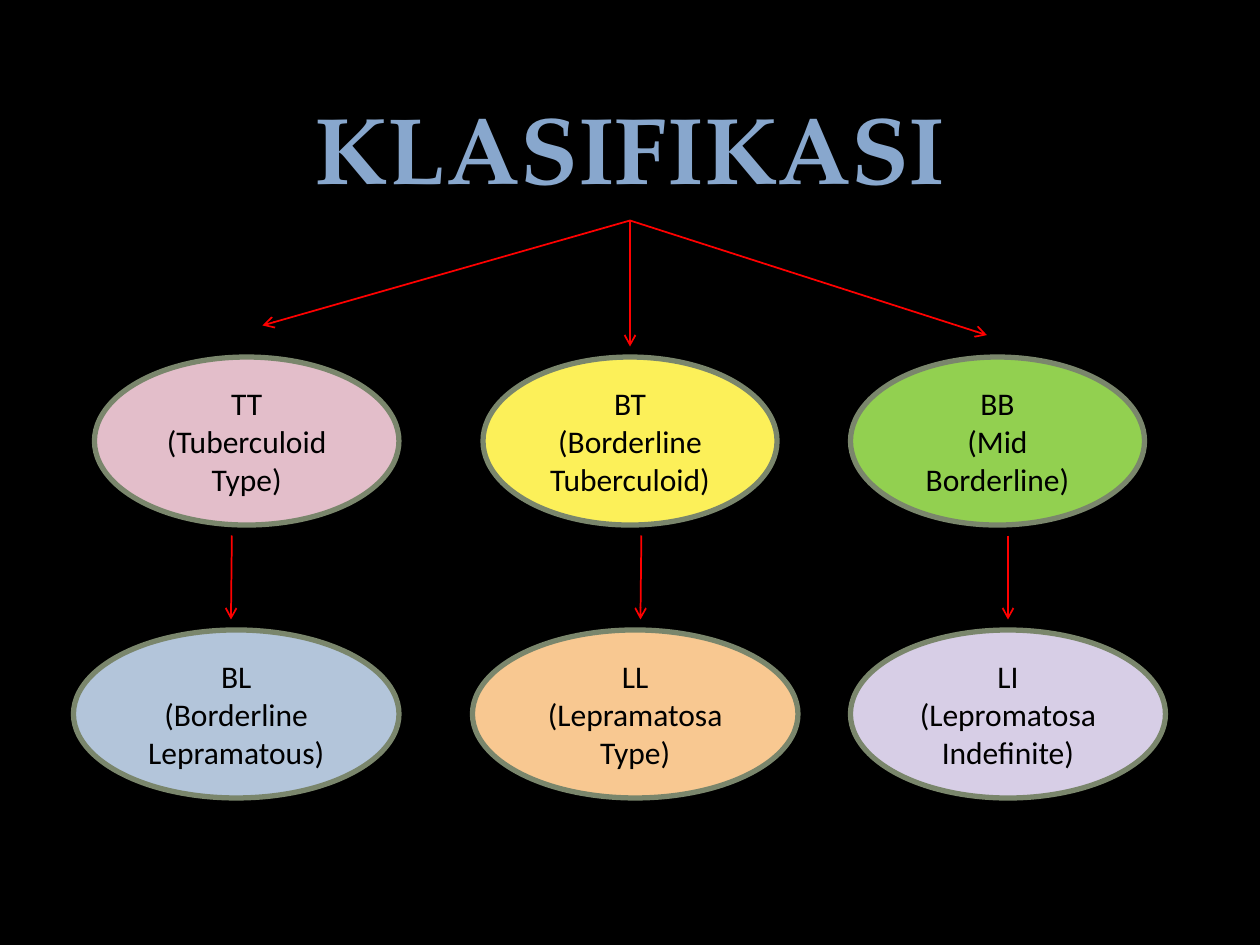
from lxml.etree import SubElement
from pptx import Presentation
from pptx.dml.color import RGBColor
from pptx.enum.shapes import MSO_CONNECTOR, MSO_SHAPE
from pptx.enum.text import MSO_ANCHOR, PP_ALIGN
from pptx.oxml.ns import qn
from pptx.util import Pt

TITLE = "KLASIFIKASI"
TITLE_STOPS = [(0, "8EAACF"), (25, "88A7CD"), (50, "7796BC"),
               (75, "88A7CD"), (100, "8EAACF")]

# Each row: top, then (code, name, left, width, fill) per type
TYPE_ROWS = [
    (204, [("TT", "(Tuberculoid Type)", 54, 174, "E3BECA"),
           ("BT", "(Borderline Tuberculoid)", 276, 168, "FCF059"),
           ("BB", "(Mid Borderline)", 486, 168, "92D050")]),
    (360, [("BL", "(Borderline Lepramatous)", 42, 186, "B3C5DA"),
           ("LL", "(Lepramatosa Type)", 270, 186, "F8C891"),
           ("LI", "(Lepromatosa Indefinite)", 486, 180, "D7CEE6")]),
]
TYPE_HEIGHT = 96

# Arrows fan out from under the title, then drop between the rows
FAN_START = (360, 126)
FAN_ENDS = [(360, 198), (150, 186), (564, 191.5)]
DROP_TOP, DROP_BOTTOM = 306, 354
DROPS = [(132.5, 132), (366.5, 366), (576, 576)]
arrows = [(FAN_START, end) for end in FAN_ENDS]
arrows += [((x1, DROP_TOP), (x2, DROP_BOTTOM)) for x1, x2 in DROPS]


def color(hex_string):
    return RGBColor.from_string(hex_string)


def add_title(slide):
    title = slide.shapes.add_textbox(Pt(156), Pt(48), Pt(408), Pt(73))
    frame = title.text_frame
    frame.word_wrap = True
    frame.text = TITLE
    paragraph = frame.paragraphs[0]
    paragraph.alignment = PP_ALIGN.CENTER
    font = paragraph.runs[0].font
    font.name, font.size, font.bold = "TeX Gyre Pagella", Pt(54), True
    font.fill.gradient()
    font.fill.gradient_angle = 270
    stops = next(title.element.iter(qn("a:gsLst")))
    for stop in list(stops):
        stops.remove(stop)
    for percent, shade in TITLE_STOPS:
        stop = SubElement(stops, qn("a:gs"), pos=str(percent * 1000))
        SubElement(stop, qn("a:srgbClr"), val=shade)


def add_type(slide, top, code, name, left, width, fill):
    ellipse = slide.shapes.add_shape(
        MSO_SHAPE.OVAL, Pt(left), Pt(top), Pt(width), Pt(TYPE_HEIGHT))
    ellipse.shadow.inherit = False
    ellipse.fill.solid()
    ellipse.fill.fore_color.rgb = color(fill)
    ellipse.line.color.rgb = color("7A866C")
    ellipse.line.width = Pt(3)
    frame = ellipse.text_frame
    frame.word_wrap = True
    frame.vertical_anchor = MSO_ANCHOR.MIDDLE
    frame.text = f"{code}\n{name}"
    for paragraph in frame.paragraphs:
        paragraph.alignment = PP_ALIGN.CENTER
        font = paragraph.runs[0].font
        font.name, font.size = "Calibri", Pt(18)
        font.color.rgb = color("000000")


def add_arrow(slide, start, end):
    arrow = slide.shapes.add_connector(
        MSO_CONNECTOR.STRAIGHT, *(Pt(v) for v in start + end))
    arrow.line.color.rgb = color("FF0000")
    arrow.line.width = Pt(1)
    properties = arrow.element.spPr
    SubElement(properties.find(qn("a:ln")), qn("a:tailEnd"), type="arrow")
    SubElement(properties, qn("a:effectLst"))


def main():
    deck = Presentation()
    deck.slide_width, deck.slide_height = Pt(720), Pt(540)
    slide = deck.slides.add_slide(deck.slide_layouts[6])
    slide.background.fill.solid()
    slide.background.fill.fore_color.rgb = color("000000")

    add_title(slide)
    for top, types in TYPE_ROWS:
        for leprosy_type in types:
            add_type(slide, top, *leprosy_type)
    for start, end in arrows:
        add_arrow(slide, start, end)

    deck.save("out.pptx")


if __name__ == "__main__":
    main()
